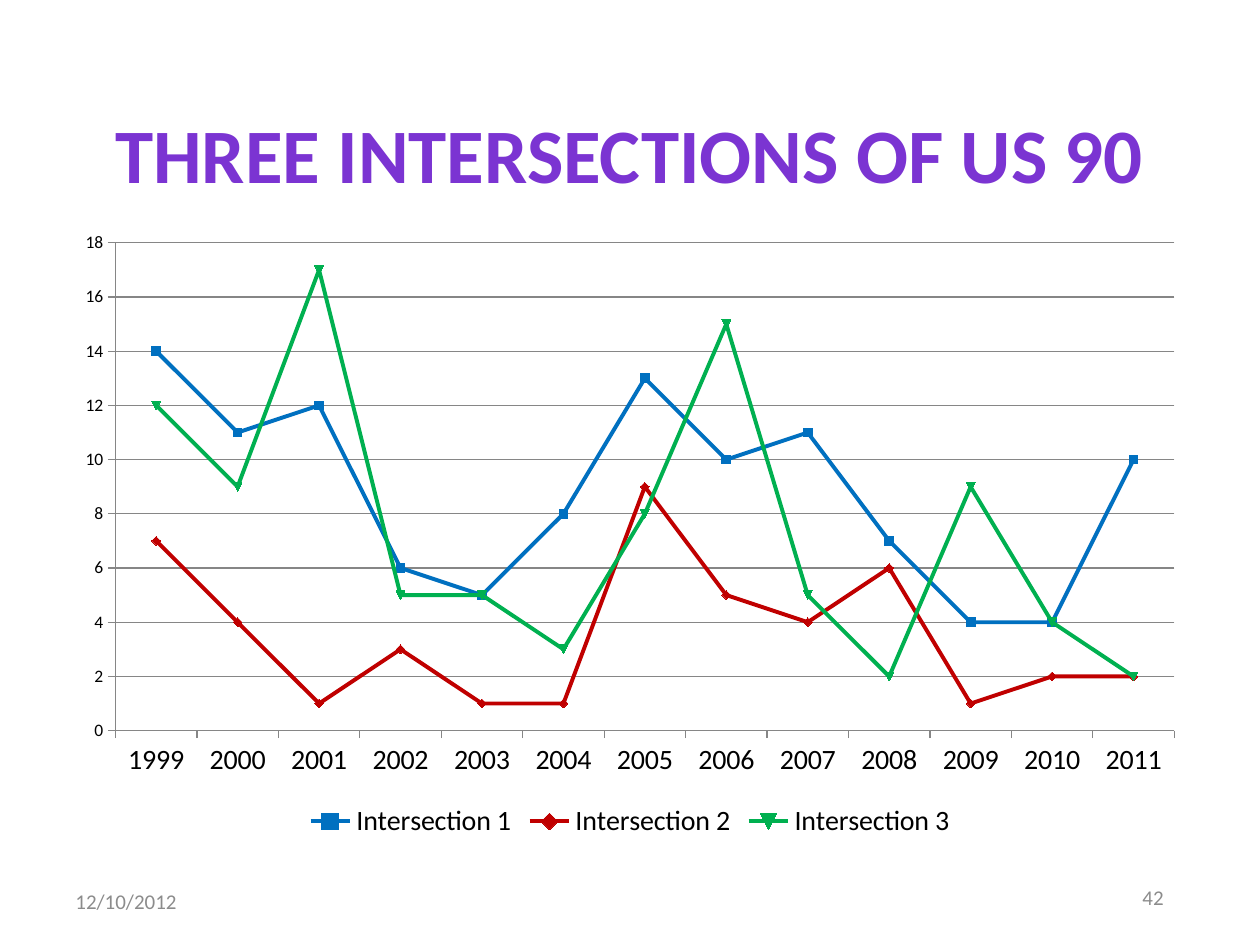
from dataclasses import dataclass

from pptx import Presentation
from pptx.chart.data import CategoryChartData
from pptx.dml.color import RGBColor
from pptx.enum.chart import XL_CHART_TYPE, XL_LEGEND_POSITION, XL_MARKER_STYLE, XL_TICK_MARK
from pptx.enum.text import MSO_ANCHOR, PP_ALIGN
from pptx.util import Pt

LINE_MARKERS = XL_CHART_TYPE.LINE_MARKERS
BOTTOM = XL_LEGEND_POSITION.BOTTOM
AUTO_MARKER = XL_MARKER_STYLE.AUTOMATIC
OUTSIDE = XL_TICK_MARK.OUTSIDE
MIDDLE = MSO_ANCHOR.MIDDLE
LEFT, CENTER, RIGHT = PP_ALIGN.LEFT, PP_ALIGN.CENTER, PP_ALIGN.RIGHT


@dataclass(frozen=True)
class Theme:
    font: str = "Calibri"
    title: str = "7B34D2"
    text: str = "000000"
    footer: str = "8C8C8C"
    axis: str = "868686"
    series: tuple = ("0070C0", "C00000", "00B050")
    title_size: int = 44
    label_size: int = 16
    value_size: int = 10
    footer_size: int = 12


THEME = Theme()
YEARS = [str(year) for year in range(1999, 2012)]
COUNTS = {
    "Intersection 1": [14, 11, 12, 6, 5, 8, 13, 10, 11, 7, 4, 4, 10],
    "Intersection 2": [7, 4, 1, 3, 1, 1, 9, 5, 4, 6, 1, 2, 2],
    "Intersection 3": [12, 9, 17, 5, 5, 3, 8, 15, 5, 2, 9, 4, 2],
}


def rgb(color):
    return RGBColor.from_string(color)


def set_font(font, size, color, bold=False):
    font.name = THEME.font
    font.size = Pt(size)
    font.bold = bold
    font.color.rgb = rgb(color)


def set_line(line, color, width):
    line.color.rgb = rgb(color)
    line.width = Pt(width)


def set_text(sp, text, size, color, align, bold=False):
    tf = sp.text_frame
    tf.word_wrap = True
    tf.vertical_anchor = MIDDLE
    p = tf.paragraphs[0]
    p.text = text
    p.alignment = align
    set_font(p.font, size, color, bold)


def add_title(s, text):
    sp = s.shapes.title
    sp.left, sp.top, sp.width, sp.height = Pt(36), Pt(42), Pt(648), Pt(90)
    set_text(sp, text, THEME.title_size, THEME.title, CENTER, bold=True)


def add_footer(s, text, left, top, align):
    sp = s.shapes.add_textbox(Pt(left), Pt(top), Pt(168), Pt(28.8))
    set_text(sp, text, THEME.footer_size, THEME.footer, align)


def style_axis(axis, size):
    axis.major_tick_mark = OUTSIDE
    set_font(axis.tick_labels.font, size, THEME.text)
    set_line(axis.format.line, THEME.axis, 0.75)


def style_series(series, color):
    series.smooth = False
    set_line(series.format.line, color, 2.25)
    marker = series.marker
    marker.style = AUTO_MARKER
    marker.size = 5
    marker.format.fill.solid()
    marker.format.fill.fore_color.rgb = rgb(color)
    set_line(marker.format.line, color, 0.75)


def add_line_chart(s):
    data = CategoryChartData()
    data.categories = YEARS
    for name, values in COUNTS.items():
        data.add_series(name, values)
    chart = s.shapes.add_chart(
        LINE_MARKERS, Pt(36), Pt(126), Pt(648), Pt(356.4), data
    ).chart
    set_font(chart.font, THEME.value_size, THEME.text)
    chart.has_title = False
    chart.has_legend = True
    chart.legend.position = BOTTOM
    chart.legend.include_in_layout = False
    set_font(chart.legend.font, THEME.label_size, THEME.text)

    style_axis(chart.category_axis, THEME.label_size)
    axis = chart.value_axis
    style_axis(axis, THEME.value_size)
    axis.minimum_scale, axis.maximum_scale, axis.major_unit = 0, 18, 2
    axis.has_major_gridlines = True
    set_line(axis.major_gridlines.format.line, THEME.axis, 0.75)

    plot = chart.plots[0]
    plot.vary_by_categories = False
    for series, color in zip(plot.series, THEME.series):
        style_series(series, color)


def main():
    prs = Presentation()
    prs.slide_width, prs.slide_height = Pt(720), Pt(540)
    s = prs.slides.add_slide(prs.slide_layouts[5])
    add_title(s, "THREE INTERSECTIONS OF US 90")
    add_line_chart(s)
    add_footer(s, "12/10/2012", 36, 500.4, LEFT)
    add_footer(s, "42", 504, 498.24, RIGHT)
    prs.save("out.pptx")


if __name__ == "__main__":
    main()
